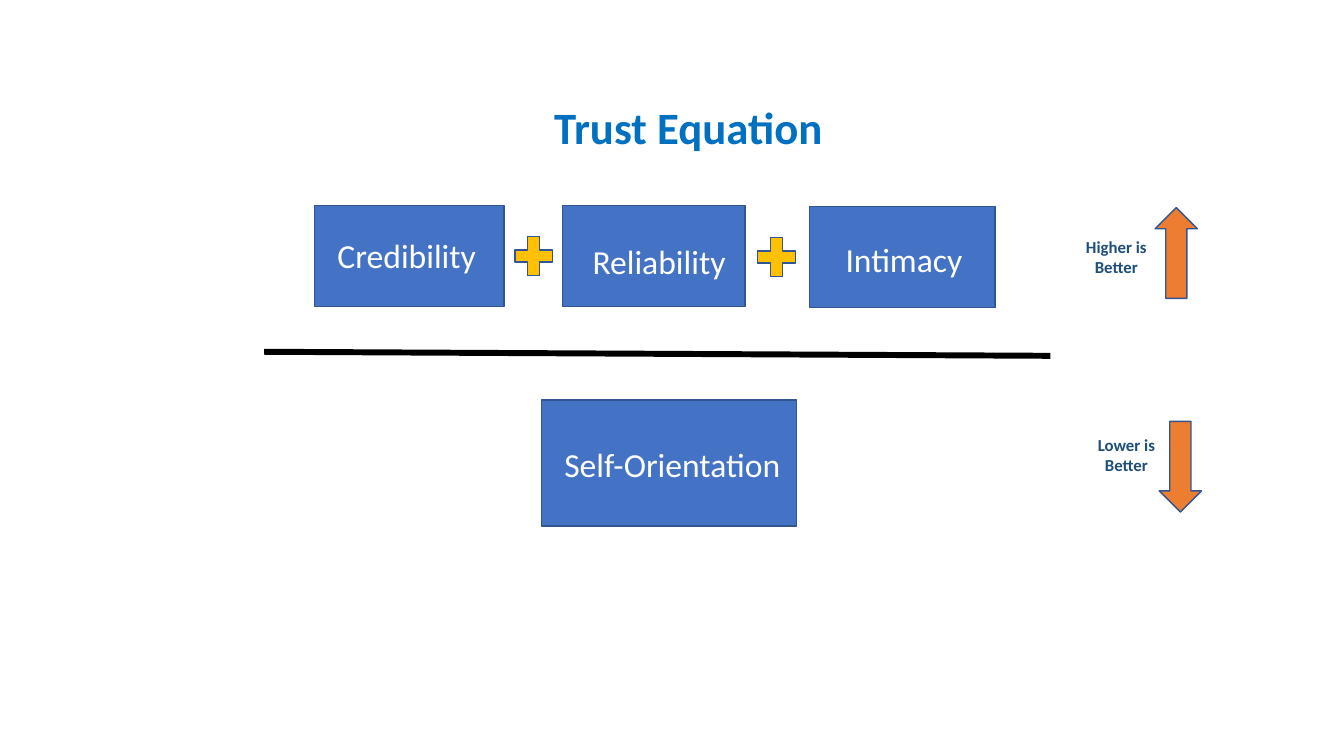
from lxml import etree
from pptx import Presentation
from pptx.dml.color import RGBColor
from pptx.enum import shapes, text
from pptx.oxml.ns import qn
from pptx.util import Pt

COLORS = {
    "title": "0070C0", "block": "4472C4", "outline": "325491", "plus": "FFC000",
    "arrow": "ED7D31", "note": "1F4E79", "white": "FFFFFF", "black": "000000",
}
SHAPE = shapes.MSO_SHAPE
CENTER = text.PP_ALIGN.CENTER


def color(name):
    return RGBColor.from_string(COLORS[name])


class EquationSlide:
    """Holds the style and the current slide; all lengths are in points."""

    font_name = "Calibri"
    outline_width = 1

    def __init__(self, presentation):
        self.slide = presentation.slides.add_slide(presentation.slide_layouts[6])

    def shape(self, kind, fill, left, top, width, height, rotation=0):
        shape = self.slide.shapes.add_shape(kind, Pt(left), Pt(top), Pt(width), Pt(height))
        shape.shadow.inherit = False
        shape.rotation = rotation
        shape.fill.solid()
        shape.fill.fore_color.rgb = color(fill)
        shape.line.color.rgb = color("outline")
        shape.line.width = Pt(self.outline_width)

    def text(self, words, left, top, width, height, size=24, fill="white", bold=False,
             **paragraph_format):
        box = self.slide.shapes.add_textbox(Pt(left), Pt(top), Pt(width), Pt(height))
        box.text_frame.word_wrap = True
        paragraph = box.text_frame.paragraphs[0]
        for name, value in paragraph_format.items():
            setattr(paragraph, name, value)
        run = paragraph.add_run()
        run.text = words
        font_format = {"name": self.font_name, "size": Pt(size), "bold": bold}
        for name, value in font_format.items():
            setattr(run.font, name, value)
        run.font.color.rgb = color(fill)
        return box

    def line(self, start, end, width):
        points = [Pt(value) for value in (*start, *end)]
        connector = self.slide.shapes.add_connector(shapes.MSO_CONNECTOR.STRAIGHT, *points)
        connector.line.color.rgb = color("black")
        connector.line.width = Pt(width)
        etree.SubElement(connector.element.spPr, qn("a:effectLst"))


def main():
    presentation = Presentation()
    presentation.slide_width, presentation.slide_height = Pt(960), Pt(540)
    equation = EquationSlide(presentation)

    # Title
    title = equation.text("Trust Equation", 77.76, 40.32, 828, 104.4, size=32, fill="title",
                          bold=True, alignment=CENTER, line_spacing=0.9)
    title.text_frame.vertical_anchor = text.MSO_ANCHOR.MIDDLE

    # Terms: block position and size, then label position and width
    terms = [
        ("Credibility", (224.64, 146.88, 135.36, 72), (234, 164.16, 125.28)),
        ("Reliability", (401.76, 146.88, 130.32, 72), (416.16, 168.48, 116.64)),
        ("Intimacy", (578.16, 147.6, 132.48, 72), (596.88, 167.04, 102.96)),
        ("Self-Orientation", (386.64, 285.84, 182.16, 90), (396, 313.2, 172.8)),
    ]
    for words, block, label in terms:
        equation.shape(SHAPE.RECTANGLE, "block", *block)
        equation.text(words, *label, 36)

    # Fraction bar
    equation.line((188.64, 251.28), (750.24, 254.16), 4.25)

    # Plus signs
    for left, top in [(362.88, 164.16), (536.4, 164.88)]:
        equation.shape(SHAPE.MATH_PLUS, "plus", left, top, 36.72, 37.44)

    # Direction arrows and their notes
    directions = [
        ("Higher is Better", (825.12, 148.32), 0, (766.08, 165.6)),
        ("Lower is Better", (828, 300.96), 180, (773.28, 306.72)),
    ]
    for words, arrow, rotation, note in directions:
        equation.shape(SHAPE.UP_ARROW, "arrow", *arrow, 30.24, 64.8, rotation)
        equation.text(words, *note, 62.64, 36, size=12, fill="note", bold=True,
                      alignment=CENTER)

    presentation.save("out.pptx")


if __name__ == "__main__":
    main()
